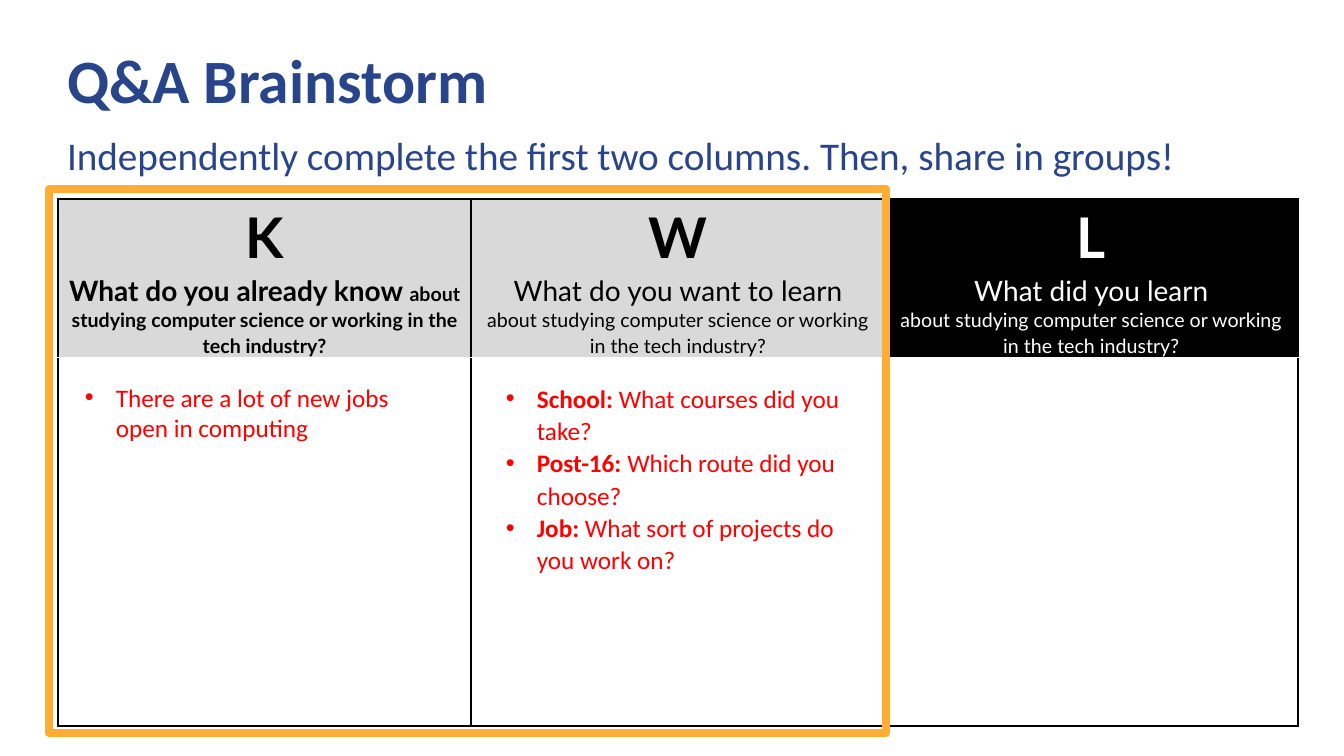
from pptx import Presentation
from pptx.dml.color import RGBColor
from pptx.enum.shapes import MSO_SHAPE as Shape
from pptx.enum.text import MSO_ANCHOR as Anchor, MSO_AUTO_SIZE as Fit, PP_ALIGN as Align
from pptx.oxml.ns import qn
from pptx.util import Pt
from lxml.etree import SubElement as Sub

NAVY, RED, BLACK, WHITE, GREY, GOLD = '28458C', 'FF0000', '000000', 'FFFFFF', 'D9D9D9', 'FFAD33'
TITLE = 'Q&A Brainstorm'
TASK = 'Independently complete the first two columns. Then, share in groups!'
TOPIC = 'about studying computer science or working in the tech industry?'
COLS = [
    ('K', [[('What do you already know ', 20), (TOPIC, 14)]], True, BLACK, GREY),
    ('W', [[('What do you want to learn', 20)], [(TOPIC, 14)]], False, BLACK, GREY),
    ('L', [[('What did you learn', 20)], [(TOPIC, 14)]], False, WHITE, BLACK),
]
KNOWN = [[('There are a lot of new jobs open in computing', False)]]
ASKED = [
    [('School: ', True), ('What courses did you take?', False)],
    [('Post-16: ', True), ('Which route did you choose?', False)],
    [('Job: ', True), ('What sort of projects do you work on?', False)],
]
NOTES = [((75, 377, 333, 72), KNOWN, 1.0), ((496, 376, 366, 237), ASKED, 1.07)]
GRID = (58, 199, 1240, 517)
ROWS = [67, 81, 369]
EDGES = [
    {'L': BLACK, 'R': BLACK, 'T': BLACK, 'B': None},
    {'L': BLACK, 'R': BLACK, 'T': None, 'B': WHITE},
    {'L': BLACK, 'R': BLACK, 'T': WHITE, 'B': BLACK},
]
FRAME = (49, 189, 837, 544)


def px(n):
    return round(n * 914400 / 100.8)


def box(spot):
    return [px(n) for n in spot]


def rgb(code):
    return RGBColor.from_string(code)


def put(obj, form):
    for name, val in form.items():
        setattr(obj, name, val)


def write(para, text, size, color, bold=False, face='Calibri'):
    run = para.add_run()
    run.text = text
    put(run.font, {'size': Pt(size), 'bold': bold, 'name': face})
    run.font.color.rgb = rgb(color)


def paras(frame, items):
    for i, item in enumerate(items):
        yield (frame.add_paragraph() if i else frame.paragraphs[0]), item


def dot(para, mark):
    ppr = para._p.get_or_add_pPr()
    pad = px(31) if mark else 0
    ppr.set('marL', str(pad))
    ppr.set('indent', str(-pad))
    if mark:
        Sub(ppr, qn('a:buFont'), typeface='Arial')
        Sub(ppr, qn('a:buChar'), char=mark)
    else:
        Sub(ppr, qn('a:buNone'))


def edge(cell, sides):
    tcpr = cell._tc.get_or_add_tcPr()
    for side in 'LRTB':
        color = sides[side]
        width = Pt(1) if color == WHITE else Pt(1.5)
        line = Sub(tcpr, qn('a:ln' + side), w=str(width))
        if color:
            Sub(Sub(line, qn('a:solidFill')), qn('a:srgbClr'), val=color)
        else:
            Sub(line, qn('a:noFill'))


def holder(shape, spot, text, size, bold, anchor):
    put(shape, dict(zip(('left', 'top', 'width', 'height'), box(spot))))
    frame = shape.text_frame
    put(frame, {'auto_size': Fit.NONE, 'word_wrap': True, 'vertical_anchor': anchor})
    para = frame.paragraphs[0]
    dot(para, None)
    put(para, {'alignment': Align.LEFT, 'line_spacing': 0.9, 'space_before': Pt(0)})
    write(para, text, size, NAVY, bold)


def table(slide):
    grid = slide.shapes.add_table(len(ROWS), len(COLS), *box(GRID)).table
    put(grid, {'first_row': False, 'horz_banding': False})
    for row, high in zip(grid.rows, ROWS):
        row.height = px(high)
    for c, (mark, lines, bold, ink, fill) in enumerate(COLS):
        grid.columns[c].width = px(GRID[2] / len(COLS))
        heads = [([[(mark, 40)]], True, fill), (lines, bold, fill), ([], False, WHITE)]
        for r, (items, heavy, back) in enumerate(heads):
            cell = grid.cell(r, c)
            put(cell, {'margin_left': px(7), 'margin_right': px(7), 'margin_top': 0, 'margin_bottom': 0})
            edge(cell, EDGES[r])
            cell.fill.solid()
            cell.fill.fore_color.rgb = rgb(back)
            for para, runs in paras(cell.text_frame, items):
                put(para, {'alignment': Align.CENTER, 'line_spacing': 1.07})
                for text, size in runs:
                    write(para, text, size, ink, heavy, 'Lato')


def note(slide, spot, items, gap):
    frame = slide.shapes.add_textbox(*box(spot)).text_frame
    put(frame, {'word_wrap': True, 'auto_size': Fit.SHAPE_TO_FIT_TEXT})
    for para, runs in paras(frame, items):
        dot(para, '•')
        para.line_spacing = gap
        para.font.color.rgb = rgb(RED)
        for text, bold in runs:
            write(para, text, 18, RED, bold)


def main():
    deck = Presentation()
    put(deck, {'slide_width': px(1344), 'slide_height': px(756)})
    slide = deck.slides.add_slide(deck.slide_layouts[1])
    title, body = slide.placeholders
    holder(title, (57, 15, 526, 107), TITLE, 44, True, Anchor.BOTTOM)
    holder(body, (57, 132, 1240, 57), TASK, 28, False, Anchor.TOP)
    table(slide)
    for spot, items, gap in NOTES:
        note(slide, spot, items, gap)
    frame = slide.shapes.add_shape(Shape.RECTANGLE, *box(FRAME))
    frame.shadow.inherit = False
    frame.fill.background()
    frame.line.color.rgb = rgb(GOLD)
    frame.line.width = Pt(6)
    deck.save("out.pptx")


if __name__ == '__main__':
    main()
